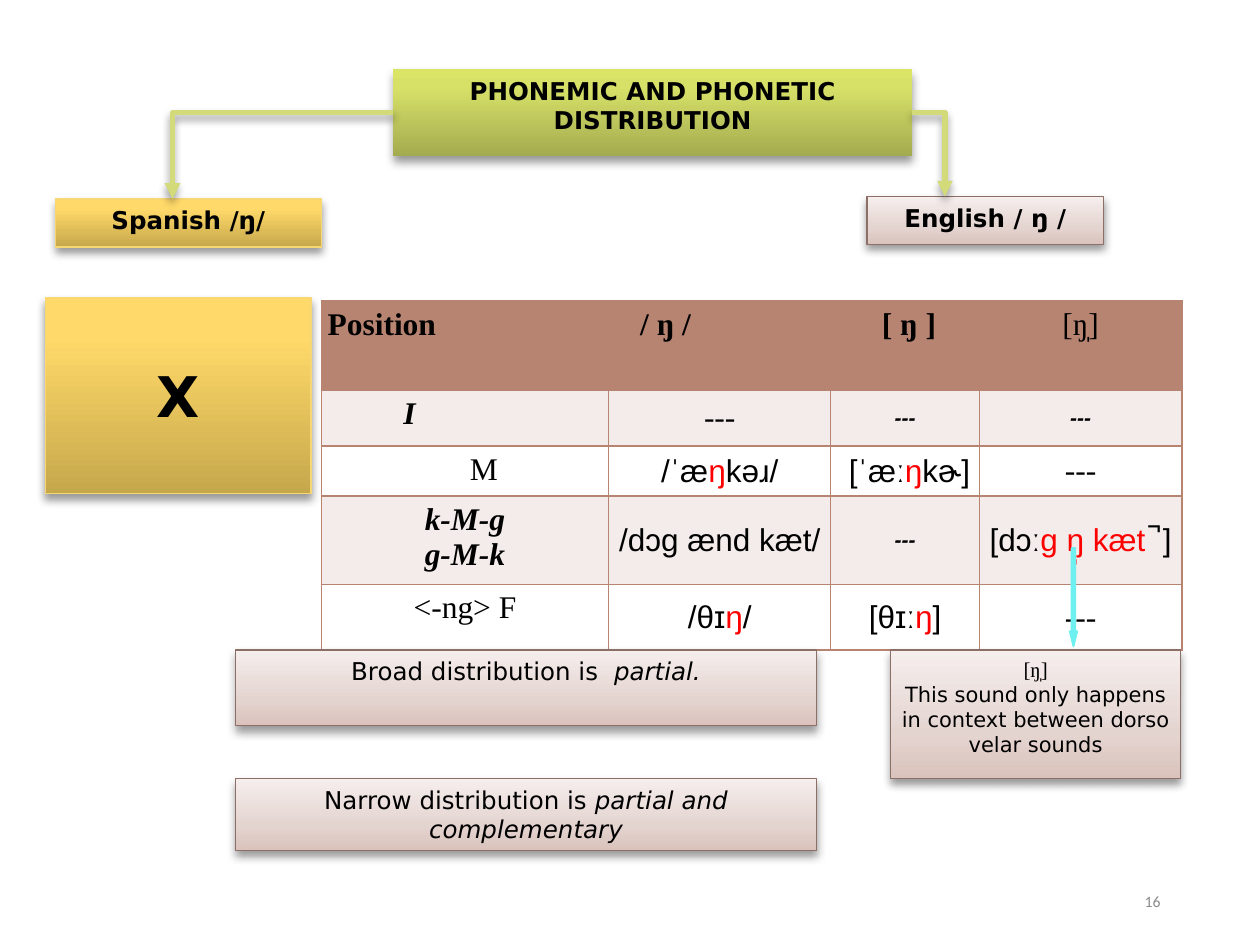
from collections import namedtuple

from lxml import etree
from pptx import Presentation, util as u
from pptx.dml.color import RGBColor
from pptx.enum import shapes, text
from pptx.oxml import ns, parse_xml

COLORS = {"ink": "000000", "stress": "FF0000", "white": "FFFFFF", "number": "8C8C8C",
          "clay": "B88472", "stripe": "F3ECEB", "lime": "D2DA7A", "cyan": "6FF0F0",
          "gold edge": "F7D774", "rose edge": "8C7067"}
# Gradient stops run from the bottom edge to the top edge
THEMES = {"lime": ([(0, "A3AB4F"), (80, "D7E168"), (100, "DAE466")], None),
          "gold": ([(0, "C6A84C"), (80, "FFD969"), (100, "FFDA6B")], "gold edge"),
          "rose": ([(0, "DAC3BC"), (35, "E4D4D0"), (100, "F5EEED")], "rose edge")}
FONTS = {"d": "DejaVu Sans", "t": "Times New Roman", "a": "Arial", "c": "Calibri"}
COLUMNS, ROWS = 100, 75
UNIT = u.Inches(10) // COLUMNS
PAD = u.Inches(0.05)
CENTER, LEFT, RIGHT = text.PP_ALIGN.CENTER, text.PP_ALIGN.LEFT, text.PP_ALIGN.RIGHT
Box = namedtuple("Box", "left top width height")


def grid(columns):
    return u.Emu(round(columns * UNIT))


def color(name):
    return RGBColor.from_string(COLORS[name])


def write(frame, paragraphs, align=CENTER):
    """Write paragraphs of (text, style, size[, colour]) spans; style letters: font, b, i."""
    frame.word_wrap = True
    for index, spans in enumerate(paragraphs):
        para = frame.add_paragraph() if index else frame.paragraphs[0]
        para.alignment = align
        for words, style, size, *ink in spans:
            span = para.add_run()
            span.text = words
            span.font.name = FONTS[style[0]]
            span.font.size = u.Pt(size)
            span.font.bold = "b" in style
            span.font.italic = "i" in style
            span.font.color.rgb = color(ink[0] if ink else "ink")


def set_margins(item):
    item.margin_left = item.margin_right = item.margin_top = item.margin_bottom = PAD


def add_shadow(properties):
    effects = properties.find(ns.qn("a:effectLst"))
    if effects is None:
        effects = etree.SubElement(properties, ns.qn("a:effectLst"))
    effects.append(parse_xml(
        f'<a:outerShdw {ns.nsdecls("a")} blurRad="{u.Pt(5)}" dist="{u.Pt(3)}" dir="5400000" '
        'rotWithShape="0"><a:srgbClr val="000000"><a:alpha val="40000"/></a:srgbClr>'
        '</a:outerShdw>'))


def add_panel(page, box, theme, paragraphs, anchor=text.MSO_ANCHOR.TOP):
    panel = page.shapes.add_shape(shapes.MSO_SHAPE.RECTANGLE, *map(grid, box))
    stops, edge = THEMES[theme]
    panel.fill.gradient()
    panel.fill.gradient_angle = 90
    stop_list = panel._element.spPr.find(".//" + ns.qn("a:gsLst"))
    for stop in list(stop_list):
        stop_list.remove(stop)
    for position, shade in stops:
        stop = etree.SubElement(stop_list, ns.qn("a:gs"), pos=str(position * 1000))
        etree.SubElement(stop, ns.qn("a:srgbClr"), val=shade)
    if edge:
        panel.line.color.rgb = color(edge)
        panel.line.width = u.Pt(0.75)
    else:
        panel.line.fill.background()
    panel.shadow.inherit = False
    add_shadow(panel._element.spPr)
    set_margins(panel.text_frame)
    panel.text_frame.vertical_anchor = anchor
    write(panel.text_frame, paragraphs)
    return panel


def add_branch(page, banner, side, end_column, end_row):
    """Draw a one-bend arrow from a side of the banner down to a language label."""
    branch = page.shapes.add_connector(
        shapes.MSO_CONNECTOR.ELBOW, banner.left, banner.top, grid(end_column), grid(end_row))
    branch.begin_connect(banner, side)
    properties = branch._element.spPr
    properties.find(ns.qn("a:prstGeom")).set("prst", "bentConnector2")
    branch.line.color.rgb = color("lime")
    branch.line.width = u.Pt(3)
    etree.SubElement(properties.find(ns.qn("a:ln")), ns.qn("a:tailEnd"), type="triangle")
    add_shadow(properties)


def add_header(page, box):
    """Place the banner, both language labels and the branches between them."""
    left, top, width, height = box
    banner = add_panel(page, Box(left + 26.8, top, 41.2, 6.9), "lime",
                       [[("PHONEMIC AND PHONETIC DISTRIBUTION", "db", 14)]])
    add_panel(page, Box(left, top + 10.3, 21.1, 3.8), "gold", [[("Spanish /ŋ/", "db", 14)]])
    add_panel(page, Box(left + width - 18.8, top + 10.1, 18.8, 3.8), "rose",
              [[("English / ŋ /", "db", 14)]])
    add_branch(page, banner, 1, left + 9.3, top + 10.3)
    add_branch(page, banner, 3, left + 70.6, top + 10.1)


def add_borders(cell):
    properties = cell._tc.get_or_add_tcPr()
    for side in ("lnL", "lnR", "lnT", "lnB"):
        line = etree.SubElement(properties, ns.qn("a:" + side), w=str(u.Pt(1)))
        fill = etree.SubElement(line, ns.qn("a:solidFill"))
        etree.SubElement(fill, ns.qn("a:srgbClr"), val=COLORS["clay"])


def stressed(before, sound, after):
    return [[(before, "a", 18), (sound, "a", 18, "stress"), (after, "a", 18)]]


def add_distribution_table(page, box):
    dash, small_dash = [[("---", "t", 18)]], [[("---", "abi", 12)]]
    content = [
        [[[("Position", "tb", 18)]], [[("/ ŋ /", "tb", 18)]],
         [[("[ ŋ ]", "tb", 18)]], [[("[ŋ̩]", "t", 18)]]],
        [[[("I", "tbi", 18)]], dash, small_dash, small_dash],
        [[[("M", "t", 18)]], stressed("/ˈæ", "ŋ", "kəɹ/"),
         stressed("\u00a0[ˈæː", "ŋ", "kɚ]".replace("\u00a0", "")), dash],
        [[[("k-M-g", "tbi", 18)], [("g-M-k", "tbi", 18)]], [[("/dɔg ænd kæt/", "a", 18)]],
         small_dash, stressed("[dɔː", "g ŋ̩ kæt ", "̚ ]")],
        [[[("<-ng> F", "t", 18)]], stressed("/θɪ", "ŋ", "/"), stressed("[θɪː", "ŋ", "]"), dash],
    ]
    # Extra (left, right) cell margins that shift a label, in grid columns
    shifts = {(0, 1): (2, 0), (0, 2): (0.6, 0), (1, 0): (0, 8.8), (2, 0): (3, 0)}
    table = page.shapes.add_table(len(content), 4, *map(grid, box)).table
    for column, share in zip(table.columns, (0.334, 0.258, 0.173, 0.235)):
        column.width = grid(box.width * share)
    for row, share in zip(table.rows, (0.256, 0.159, 0.144, 0.253, 0.188)):
        row.height = grid(box.height * share)
    for r, row in enumerate(content):
        for c, paragraphs in enumerate(row):
            cell = table.cell(r, c)
            set_margins(cell)
            before, after = shifts.get((r, c), (0, 0))
            cell.margin_left, cell.margin_right = PAD + grid(before), PAD + grid(after)
            if r and c:
                cell.vertical_anchor = text.MSO_ANCHOR.MIDDLE
            write(cell.text_frame, paragraphs, LEFT if r == 0 and c < 2 else CENTER)
            add_borders(cell)
            cell.fill.solid()
            cell.fill.fore_color.rgb = color("clay" if r == 0 else "stripe" if r % 2 else "white")


def add_conclusions(page, box):
    """Place the two summary panels and the note on the syllabic sound."""
    left, top, width, height = box
    add_panel(page, Box(left, top, 46.1, 6), "rose",
              [[("Broad distribution is  ", "d", 14), ("partial.", "di", 14)]])
    add_panel(page, Box(left, top + height - 5.7, 46.1, 5.7), "rose",
              [[("Narrow distribution is ", "d", 14), ("partial and complementary", "di", 14)]])
    add_panel(page, Box(left + width - 23, top, 23, 10.2), "rose",
              [[("[ŋ̩]", "t", 12)],
               [("This sound only happens in context between dorso velar sounds", "d", 12)]])


def add_pointer(page, box):
    pointer = page.shapes.add_shape(shapes.MSO_SHAPE.DOWN_ARROW, *map(grid, box))
    pointer.adjustments[0], pointer.adjustments[1] = 0.5, 2
    pointer.fill.solid()
    pointer.fill.fore_color.rgb = pointer.line.color.rgb = color("cyan")
    pointer.line.width = u.Pt(1)
    pointer.shadow.inherit = False


def add_page_number(page, box):
    frame = page.shapes.add_textbox(*map(grid, box)).text_frame
    frame.vertical_anchor = text.MSO_ANCHOR.MIDDLE
    write(frame, [[("16", "c", 9, "number")]], RIGHT)


def main():
    deck = Presentation()
    deck.slide_width, deck.slide_height = grid(COLUMNS), grid(ROWS)
    page = deck.slides.add_slide(deck.slide_layouts[6])
    add_header(page, Box(4.4, 5.5, 83.2, 14.1))
    add_distribution_table(page, Box(25.5, 23.9, 68.3, 27.7))
    add_conclusions(page, Box(18.7, 51.6, 75, 15.9))
    add_pointer(page, Box(84.9, 43.5, 0.6, 7.8))
    add_panel(page, Box(3.6, 23.6, 21.1, 15.6), "gold", [[("X", "db", 32)]],
              text.MSO_ANCHOR.MIDDLE)
    add_page_number(page, Box(70.6, 69.5, 22.5, 4))
    deck.save("out.pptx")


if __name__ == "__main__":
    main()
